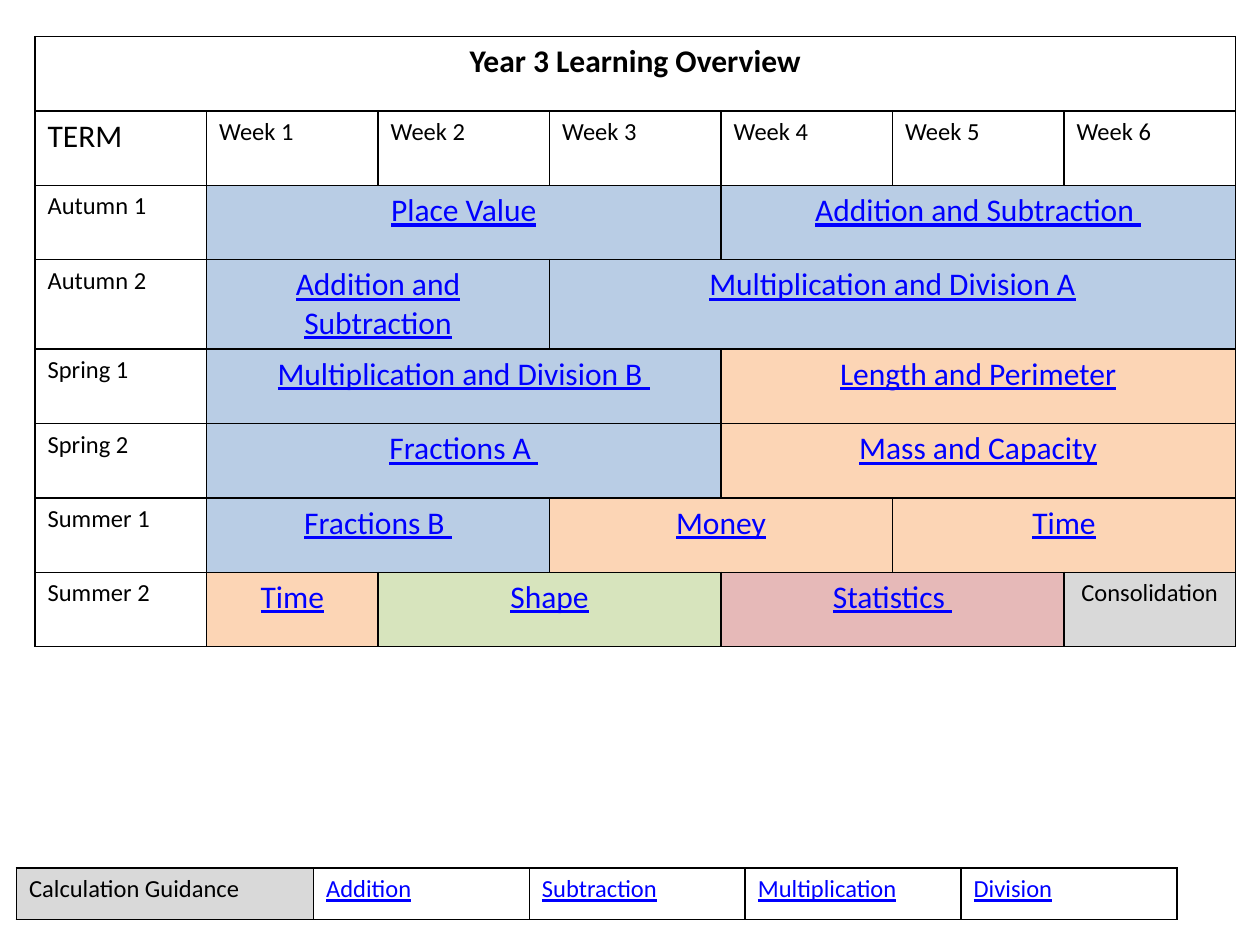
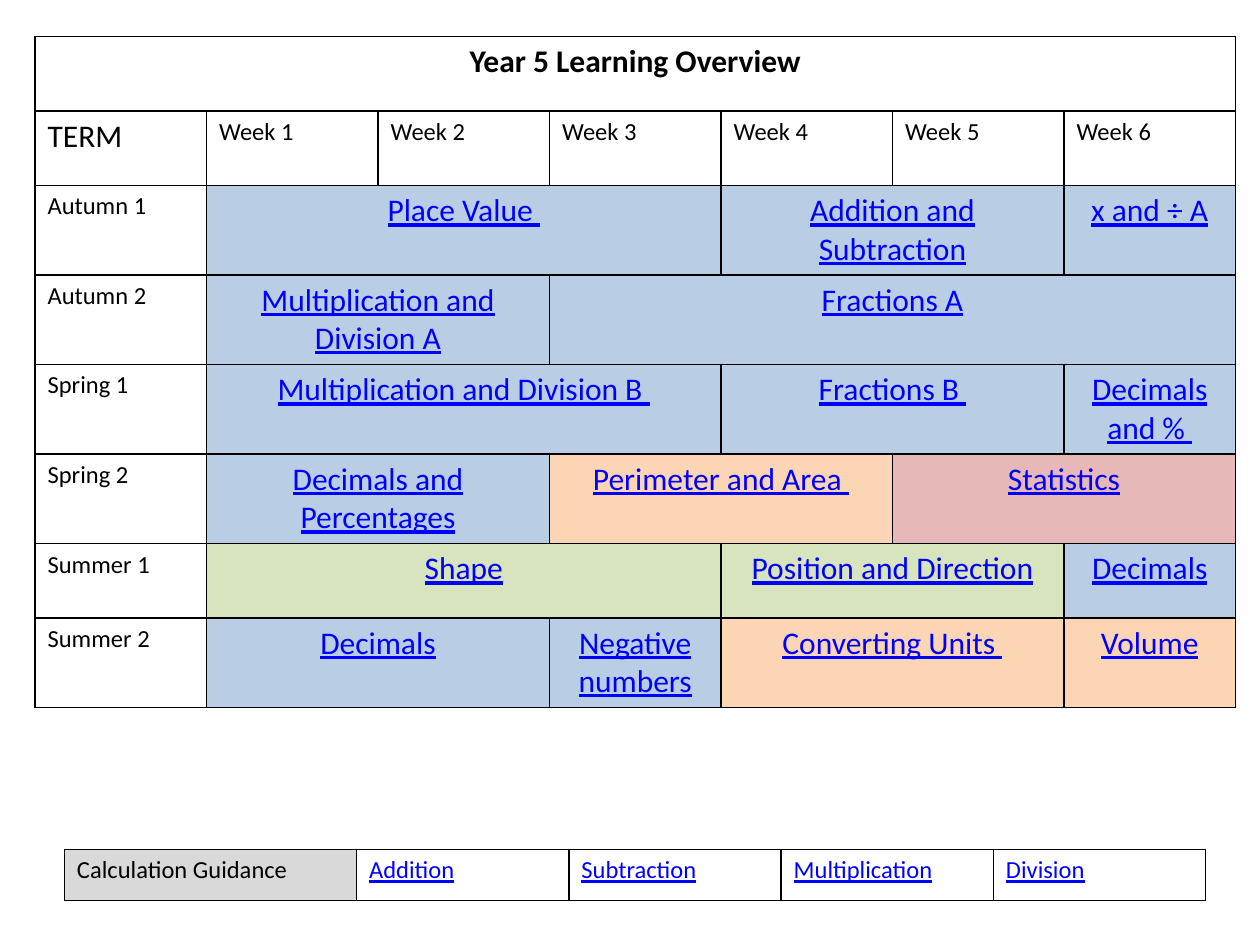
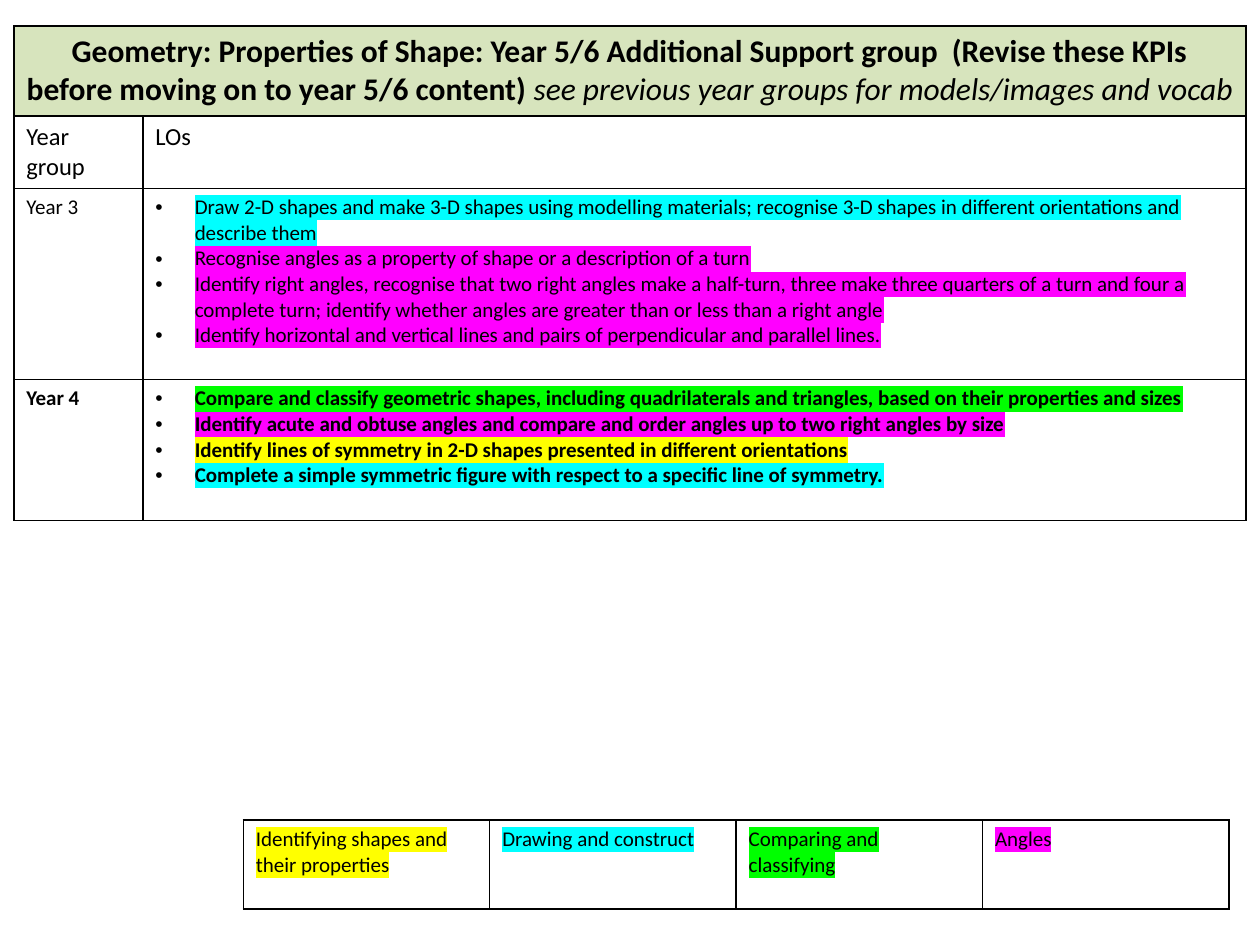
from dataclasses import dataclass

from lxml.etree import SubElement
from pptx import Presentation
from pptx.dml.color import RGBColor
from pptx.enum.text import PP_ALIGN as Align
from pptx.oxml import parse_xml
from pptx.oxml.ns import nsdecls, qn
from pptx.util import Pt


@dataclass(frozen=True)
class Theme:
    font: str = "Calibri"
    bullet_font: str = "Arial"
    ink: str = "000000"
    link: str = "0000FF"
    number: str = "B9CDE5"
    measure: str = "FCD5B5"
    geometry: str = "D7E4BD"
    statistics: str = "E6B9B8"
    neutral: str = "D9D9D9"
    identify: str = "FFFF00"
    draw: str = "00FFFF"
    compare: str = "00FF00"
    angles: str = "FF00FF"
    large: float = 18
    medium: float = 14
    small: float = 12
    border: float = 1
    indent: float = 22.5


THEME = Theme()

# Row heights for one and two lines of large text
ROW, TALL_ROW = 42.5, 51.1
WEEKS = 6
OVERVIEW_BOX = (20, 20.9, 686)

# Each term lists its blocks as (topic, weeks, colour)
NUMBER, MEASURE = THEME.number, THEME.measure
GEOMETRY, STATISTICS = THEME.geometry, THEME.statistics
YEAR_3 = {
    "Autumn 1": [("Place Value", 3, NUMBER), ("Addition and Subtraction ", 3, NUMBER)],
    "Autumn 2": [("Addition and Subtraction", 2, NUMBER),
                 ("Multiplication and Division A", 4, NUMBER)],
    "Spring 1": [("Multiplication and Division B ", 3, NUMBER),
                 ("Length and Perimeter", 3, MEASURE)],
    "Spring 2": [("Fractions A ", 3, NUMBER), ("Mass and Capacity", 3, MEASURE)],
    "Summer 1": [("Fractions B ", 2, NUMBER), ("Money", 2, MEASURE), ("Time", 2, MEASURE)],
    "Summer 2": [("Time", 1, MEASURE), ("Shape", 2, GEOMETRY),
                 ("Statistics ", 2, STATISTICS), ("Consolidation", 1, THEME.neutral)],
}
YEAR_5 = {
    "Autumn 1": [("Place Value ", 3, NUMBER), ("Addition and Subtraction", 2, NUMBER),
                 ("x and ÷ A", 1, NUMBER)],
    "Autumn 2": [("Multiplication and Division A", 2, NUMBER), ("Fractions A", 4, NUMBER)],
    "Spring 1": [("Multiplication and Division B ", 3, NUMBER), ("Fractions B ", 2, NUMBER),
                 ("Decimals and % ", 1, NUMBER)],
    "Spring 2": [("Decimals and Percentages", 2, NUMBER), ("Perimeter and Area ", 2, MEASURE),
                 ("Statistics", 2, STATISTICS)],
    "Summer 1": [("Shape", 3, GEOMETRY), ("Position and Direction", 2, GEOMETRY),
                 ("Decimals", 1, NUMBER)],
    "Summer 2": [("Decimals", 2, NUMBER), ("Negative numbers", 1, NUMBER),
                 ("Converting Units ", 2, MEASURE), ("Volume", 1, MEASURE)],
}

# Each objective is (wording, highlight)
YEAR_3_OBJECTIVES = [
    ("Draw 2-D shapes and make 3-D shapes using modelling materials; recognise 3-D shapes "
     "in different orientations and describe them", THEME.draw),
    ("Recognise angles as a property of shape or a description of a turn", THEME.angles),
    ("Identify right angles, recognise that two right angles make a half-turn, three make "
     "three quarters of a turn and four a complete turn; identify whether angles are greater "
     "than or less than a right angle", THEME.angles),
    ("Identify horizontal and vertical lines and pairs of perpendicular and parallel lines.",
     THEME.angles),
]
YEAR_4_OBJECTIVES = [
    ("Compare and classify geometric shapes, including quadrilaterals and triangles, based "
     "on their properties and sizes", THEME.compare),
    ("Identify acute and obtuse angles and compare and order angles up to two right angles "
     "by size", THEME.angles),
    ("Identify lines of symmetry in 2-D shapes presented in different orientations",
     THEME.identify),
    ("Complete a simple symmetric figure with respect to a specific line of symmetry.",
     THEME.draw),
]
STRANDS = [
    ("Identifying shapes and their properties", THEME.identify),
    ("Drawing and construct", THEME.draw),
    ("Comparing and classifying", THEME.compare),
    ("Angles", THEME.angles),
]


# Shared helpers
def add_run(paragraph, text, size, color=THEME.ink, bold=False, italic=False,
            underline=False, highlight=None):
    run = paragraph.add_run()
    run.text = text
    font = run.font
    font.name, font.size = THEME.font, Pt(size)
    font.bold, font.italic, font.underline = bold, italic, underline
    font.color.rgb = RGBColor.from_string(color)
    if highlight:
        fill = run._r.get_or_add_rPr().find(qn("a:solidFill"))
        fill.addnext(parse_xml(f'<a:highlight {nsdecls("a")}>'
                               f'<a:srgbClr val="{highlight}"/></a:highlight>'))


def write(cell, text, size, align=Align.LEFT, **style):
    paragraph = cell.text_frame.paragraphs[0]
    paragraph.alignment = align
    add_run(paragraph, text, size, **style)


def write_bullets(cell, items, bold):
    frame = cell.text_frame
    for index, (text, highlight) in enumerate(items):
        paragraph = frame.add_paragraph() if index else frame.paragraphs[0]
        properties = paragraph._p.get_or_add_pPr()
        properties.set("marL", str(Pt(THEME.indent)))
        properties.set("indent", str(-Pt(THEME.indent)))
        SubElement(properties, qn("a:buFont"), typeface=THEME.bullet_font)
        SubElement(properties, qn("a:buChar"), char="•")
        add_run(paragraph, text, THEME.small, bold=bold, highlight=highlight)


def paint(cell, color):
    cell.fill.solid()
    cell.fill.fore_color.rgb = RGBColor.from_string(color)


def add_border(cell):
    properties = cell._tc.get_or_add_tcPr()
    for side in ("lnL", "lnR", "lnT", "lnB"):
        line = SubElement(properties, qn(f"a:{side}"), w=str(Pt(THEME.border)))
        SubElement(SubElement(line, qn("a:solidFill")), qn("a:srgbClr"), val=THEME.ink)


def add_grid(slide, left, top, widths, heights):
    """Add a plain table with thin borders and no fill."""
    frame = slide.shapes.add_table(len(heights), len(widths), Pt(left), Pt(top),
                                   Pt(sum(widths)), Pt(sum(heights)))
    table = frame.table
    table.first_row = table.horz_banding = False
    for column, width in zip(table.columns, widths):
        column.width = Pt(width)
    for row, height in zip(table.rows, heights):
        row.height = Pt(height)
    for cell in table.iter_cells():
        add_border(cell)
        cell.fill.background()
    return table


# Regions
def add_guidance(slide, box):
    left, top, width, height = box
    label_width = width * 0.256
    operations = ["Addition", "Subtraction", "Multiplication", "Division"]
    widths = [label_width] + [(width - label_width) / len(operations)] * len(operations)
    table = add_grid(slide, left, top, widths, [height])
    write(table.cell(0, 0), "Calculation Guidance", THEME.medium)
    paint(table.cell(0, 0), THEME.neutral)
    for column, operation in enumerate(operations, 1):
        write(table.cell(0, column), operation, THEME.medium, color=THEME.link, underline=True)


def add_overview(slide, box, title, terms, tall_terms):
    left, top, width = box
    columns = WEEKS + 1
    heights = [ROW, ROW] + [TALL_ROW if term in tall_terms else ROW for term in terms]
    table = add_grid(slide, left, top, [width / columns] * columns, heights)

    # Title and week headings
    table.cell(0, 0).merge(table.cell(0, WEEKS))
    write(table.cell(0, 0), title, THEME.large, Align.CENTER, bold=True)
    write(table.cell(1, 0), "TERM", THEME.large)
    for week in range(1, columns):
        write(table.cell(1, week), f"Week {week}", THEME.medium)

    # Terms and their topic blocks
    for row, (term, blocks) in enumerate(terms.items(), 2):
        write(table.cell(row, 0), term, THEME.medium)
        week = 1
        for topic, weeks, color in blocks:
            cell = table.cell(row, week)
            if weeks > 1:
                cell.merge(table.cell(row, week + weeks - 1))
            paint(cell, color)
            if color == THEME.neutral:
                write(cell, topic, THEME.medium, Align.CENTER)
            else:
                write(cell, topic, THEME.large, Align.CENTER, color=THEME.link, underline=True)
            week += weeks


def add_objectives(slide, box):
    left, top, width = box
    year_width = 73.7
    table = add_grid(slide, left, top, [year_width, width - year_width], [51.1, 41.6, 109.2, 80.6])
    heading = table.cell(0, 0)
    heading.merge(table.cell(0, 1))
    paint(heading, THEME.geometry)
    write(heading, "Geometry: Properties of Shape: Year 5/6 Additional Support group  (Revise "
          "these KPIs before moving on to year 5/6 content) ", THEME.large, Align.CENTER, bold=True)
    add_run(heading.text_frame.paragraphs[0],
            "see previous year groups for models/images and vocab ", THEME.large, italic=True)
    write(table.cell(1, 0), "Year group", THEME.medium)
    write(table.cell(1, 1), "LOs", THEME.medium)
    years = [("Year 3", YEAR_3_OBJECTIVES, False), ("Year 4", YEAR_4_OBJECTIVES, True)]
    for row, (year, objectives, bold) in enumerate(years, 2):
        write(table.cell(row, 0), year, THEME.small, bold=bold)
        write_bullets(table.cell(row, 1), objectives, bold)


def add_strand_key(slide, box):
    left, top, width, height = box
    table = add_grid(slide, left, top, [width / len(STRANDS)] * len(STRANDS), [height])
    for column, (strand, highlight) in enumerate(STRANDS):
        write(table.cell(0, column), strand, THEME.small, highlight=highlight)


def main():
    presentation = Presentation()
    presentation.slide_width, presentation.slide_height = Pt(720), Pt(540)
    blank = presentation.slide_layouts[6]

    # Year overviews
    overviews = [
        ("Year 3 Learning Overview", YEAR_3, {"Autumn 2"}, (9.4, 496.1, 663.2, 29.3)),
        ("Year 5 Learning Overview", YEAR_5, set(YEAR_5) - {"Summer 1"},
         (36.8, 485.3, 652.2, 29.3)),
    ]
    for title, terms, tall_terms, guidance_box in overviews:
        slide = presentation.slides.add_slide(blank)
        add_guidance(slide, guidance_box)
        add_overview(slide, OVERVIEW_BOX, title, terms, tall_terms)

    # Geometry support group
    slide = presentation.slides.add_slide(blank)
    add_objectives(slide, (7.9, 15, 704.2))
    add_strand_key(slide, (139, 468.7, 563.2, 50.6))

    presentation.save("out.pptx")


if __name__ == "__main__":
    main()
